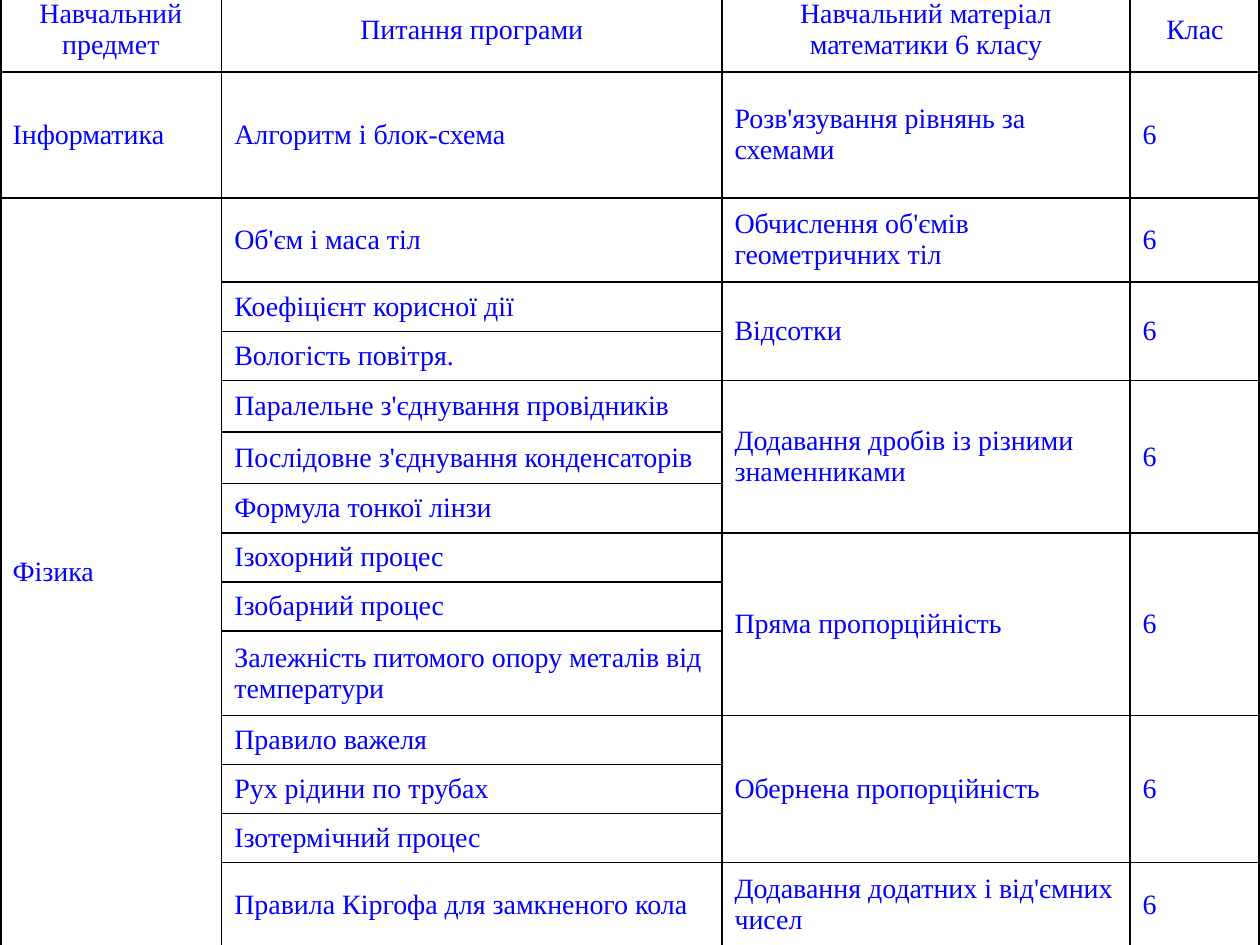
from dataclasses import dataclass

from lxml import etree
from pptx import Presentation
from pptx.dml.color import RGBColor
from pptx.enum.text import MSO_ANCHOR, PP_ALIGN
from pptx.oxml.ns import qn
from pptx.util import Inches, Pt

MIDDLE = MSO_ANCHOR.MIDDLE
LEFT, CENTER = PP_ALIGN.LEFT, PP_ALIGN.CENTER
BLANK_LAYOUT = 6


@dataclass(frozen=True)
class Theme:
    font: str = "Times New Roman"
    size: int = 16
    text: str = "0000FF"
    fill: str = "FFFFFF"
    border: str = "000000"
    inner: int = 1
    outer: int = 3


# Subject -> groups of (program questions, mathematics material, grade)
HEADER = ["Навчальний предмет", "Питання програми",
          "Навчальний матеріал математики 6 класу", "Клас"]
SUBJECTS = {
    "Інформатика": [
        (["Алгоритм і блок-схема"], "Розв'язування рівнянь за схемами", "6"),
    ],
    "Фізика": [
        (["Об'єм і маса тіл"], "Обчислення об'ємів геометричних тіл", "6"),
        (["Коефіцієнт корисної дії", "Вологість повітря."], "Відсотки", "6"),
        (["Паралельне з'єднування провідників",
          "Послідовне з'єднування конденсаторів",
          "Формула тонкої лінзи"],
         "Додавання дробів із різними знаменниками", "6"),
        (["Ізохорний процес", "Ізобарний процес",
          "Залежність питомого опору металів від температури"],
         "Пряма пропорційність", "6"),
        (["Правило важеля", "Рух рідини по трубах", "Ізотермічний процес"],
         "Обернена пропорційність", "6"),
        (["Правила Кіргофа для замкненого кола"],
         "Додавання додатних і від'ємних чисел", "6"),
    ],
}
COL_WIDTHS = [1.76, 3.97, 3.24, 1.03]
ROW_HEIGHTS = [0.67, 1, 0.67, 0.39, 0.39, 0.41, 0.41, 0.39,
               0.39, 0.39, 0.67, 0.39, 0.39, 0.39, 0.67]


class Deck:
    """Holds the theme and the current slide."""

    def __init__(self, prs, theme):
        self.theme = theme
        self.s = prs.slides.add_slide(prs.slide_layouts[BLANK_LAYOUT])

    def table(self, left, top, widths, heights):
        """Add an empty table with a plain fill and a heavier outer frame."""
        rows, cols = len(heights), len(widths)
        sp = self.s.shapes.add_table(rows, cols, Inches(left), Inches(top),
                                     Inches(sum(widths)), Inches(sum(heights)))
        table = sp.table
        for column, width in zip(table.columns, widths):
            column.width = Inches(width)
        for row, height in zip(table.rows, heights):
            row.height = Inches(height)
        for i in range(rows):
            for j in range(cols):
                cell = table.cell(i, j)
                self.borders(cell, L=j == 0, R=j == cols - 1,
                             T=i == 0, B=i == rows - 1)
                cell.fill.solid()
                cell.fill.fore_color.rgb = RGBColor.from_string(self.theme.fill)
        return table

    def borders(self, cell, **sides):
        """Draw each side; a true value marks the outer frame."""
        tcPr = cell._tc.get_or_add_tcPr()
        for side, is_outer in sides.items():
            width = self.theme.outer if is_outer else self.theme.inner
            ln = etree.SubElement(tcPr, qn(f"a:ln{side}"), w=str(Pt(width)))
            fill = etree.SubElement(ln, qn("a:solidFill"))
            etree.SubElement(fill, qn("a:srgbClr"), val=self.theme.border)

    def cell(self, table, row, col, text, span=1, align=LEFT):
        """Write a cell, merged downwards over span rows."""
        cell = table.cell(row, col)
        if span > 1:
            cell.merge(table.cell(row + span - 1, col))
        cell.vertical_anchor = MIDDLE
        p = cell.text_frame.paragraphs[0]
        p.text = text
        p.alignment = align
        p.font.name = self.theme.font
        p.font.size = Pt(self.theme.size)
        p.font.color.rgb = RGBColor.from_string(self.theme.text)


def main():
    prs = Presentation()
    prs.slide_width, prs.slide_height = Inches(10), Inches(7.5)
    deck = Deck(prs, Theme())
    table = deck.table(0, -0.1, COL_WIDTHS, ROW_HEIGHTS)

    # Header row
    for col, text in enumerate(HEADER):
        deck.cell(table, 0, col, text, align=CENTER)

    # Subjects and their topic groups
    row = 1
    for subject, groups in SUBJECTS.items():
        subject_span = sum(len(questions) for questions, _, _ in groups)
        deck.cell(table, row, 0, subject, subject_span)
        for questions, material, grade in groups:
            span = len(questions)
            deck.cell(table, row, 2, material, span)
            deck.cell(table, row, 3, grade, span)
            for question in questions:
                deck.cell(table, row, 1, question)
                row += 1

    prs.save("out.pptx")


if __name__ == "__main__":
    main()
